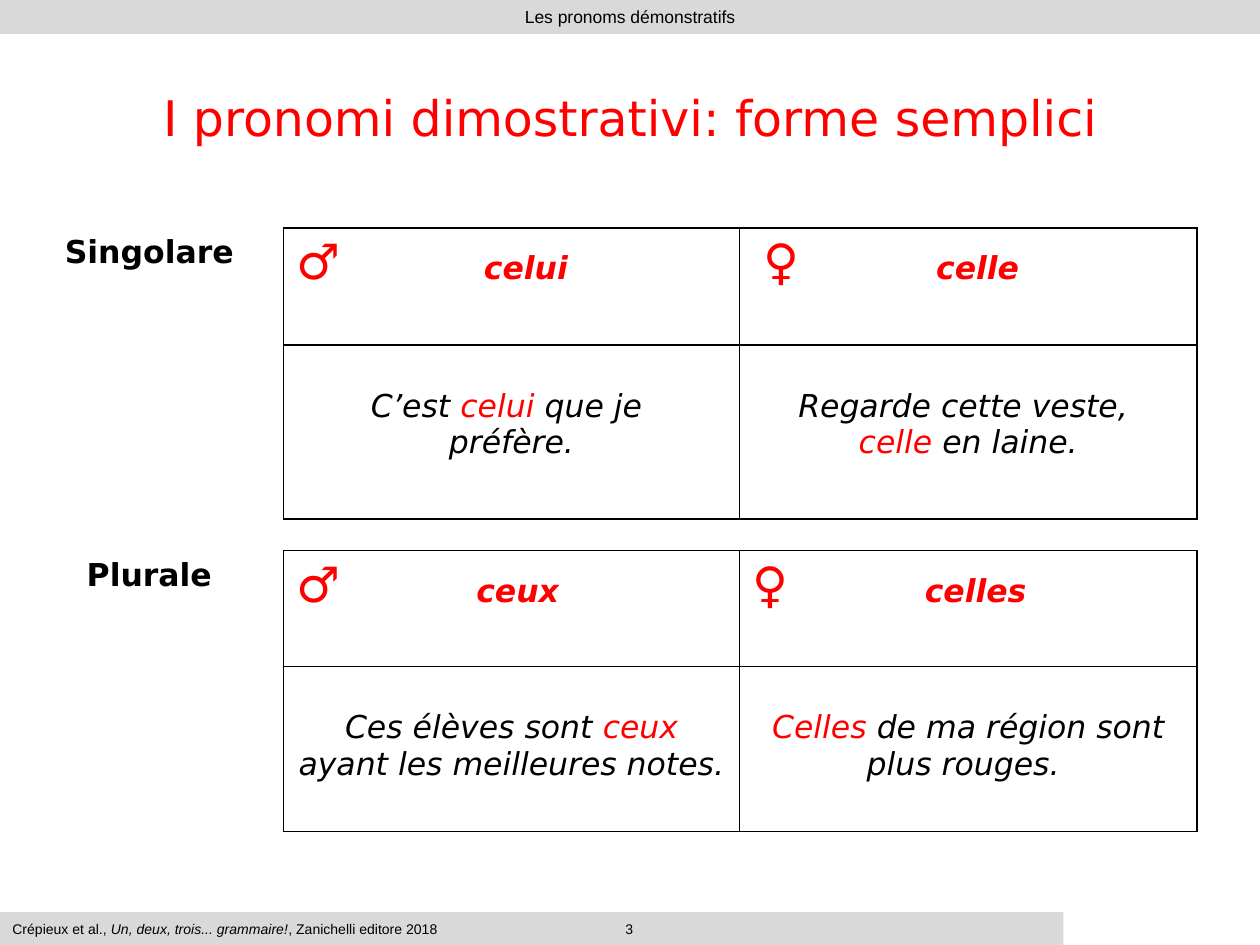
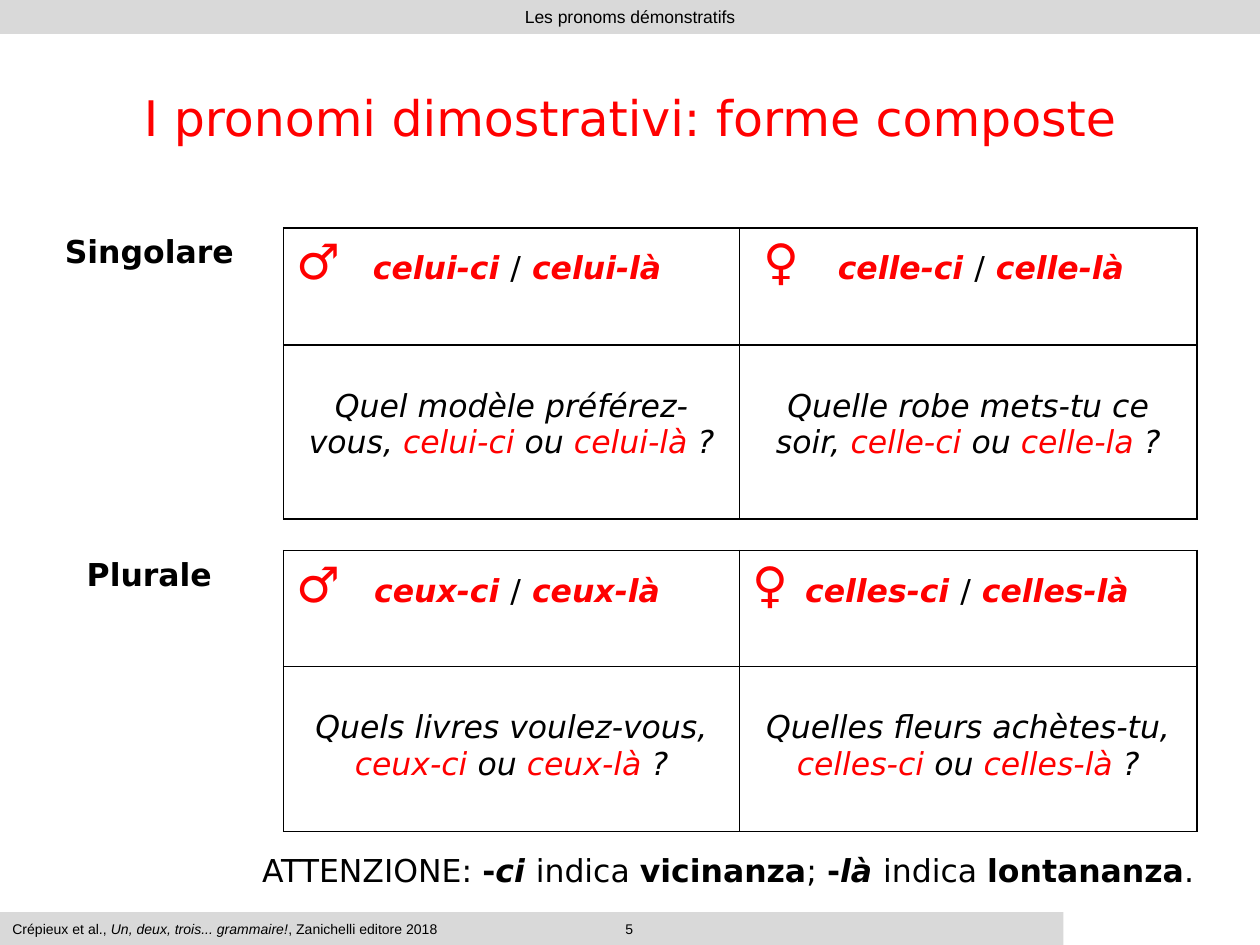
"""Builds two slides on the simple and compound forms of French demonstrative pronouns."""
from lxml.etree import SubElement
from pptx import Presentation
from pptx.dml.color import RGBColor
from pptx.enum.shapes import MSO_SHAPE
from pptx.enum.text import MSO_ANCHOR, PP_ALIGN
from pptx.oxml import parse_xml
from pptx.oxml.ns import nsdecls, qn
from pptx.util import Inches, Pt

RED = RGBColor(0xFF, 0x00, 0x00)
BLACK = RGBColor(0x00, 0x00, 0x00)
GREY = RGBColor(0xD9, 0xD9, 0xD9)
W, H = 10, 7.5
COLS = [2.13, 3.62, 3.63]
LEFT = 0.12
FOOT = 0.26
TABLES = [("Singolare", 1.81, [0.93, 1.38], ["", " "]),
          ("Plurale", 4.37, [0.92, 1.31], ["", ""])]

SLIDES = [
    ("I pronomi dimostrativi: forme semplici", "3", [
        [("celui", 1.49, "C’est *celui *que je \npréfère."),
         ("celle", 1.46, "Regarde cette veste, \n*celle *en laine.")],
        [("ceux", 1.43, "Ces élèves sont *ceux *ayant les meilleures notes."),
         ("celles", 1.37, "*Celles* de ma région sont plus rouges. ")]]),
    ("I pronomi dimostrativi: forme composte", "5", [
        [("celui-ci / celui-là", 0.61, "Quel modèle préférez-vous, *celui-ci *ou *celui-là* ?"),
         ("celle-ci / celle-là", 0.68, "Quelle robe mets-tu ce soir, *celle-ci *ou *celle-la* ?")],
        [("ceux-ci / ceux-là", 0.62, "Quels livres voulez-vous, *ceux-ci *ou *ceux-là* ?"),
         ("celles-ci / celles-là", 0.42, "Quelles fleurs achètes-tu, *celles-ci *ou *celles-là* ?")]]),
]
WARNING = [("ATTENZIONE: ", ""), ("-", "b"), ("ci ", "bi"), ("indica ", ""),
           ("vicinanza", "b"), ("; ", ""), ("-", "b"), ("là ", "bi"),
           ("indica ", ""), ("lontananza", "b"), (".", "")]


def add_text(p, text, size=18, font="DejaVu Sans", color=BLACK, bold=False, italic=False):
    for i, line in enumerate(text.split("\n")):
        if i:
            p.add_line_break()
        if line:
            r = p.add_run()
            r.text = line
            r.font.size, r.font.name = Pt(size), font
            r.font.bold, r.font.italic = bold, italic
            r.font.color.rgb = color


def add_band(s, x, y, w, h, align):
    sp = s.shapes.add_shape(MSO_SHAPE.RECTANGLE, Inches(x), Inches(y), Inches(w), Inches(h))
    sp.shadow.inherit = False
    sp.fill.solid()
    sp.fill.fore_color.rgb = GREY
    sp.line.fill.background()
    tf = sp.text_frame
    tf.word_wrap = True
    tf.margin_top = tf.margin_bottom = 0
    tf.vertical_anchor = MSO_ANCHOR.MIDDLE
    p = tf.paragraphs[0]
    p.alignment = align
    return p


prs = Presentation()
prs.slide_width, prs.slide_height = Inches(W), Inches(H)

for title, number, groups in SLIDES:
    compound = "composte" in title
    s = prs.slides.add_slide(prs.slide_layouts[1 if compound else 5])

    p = add_band(s, 0, 0, W, 0.27, PP_ALIGN.CENTER)
    add_text(p, "Les pronoms démonstratifs", size=10, font="Arial")
    p = add_band(s, 0, H - FOOT, 8.44, FOOT, PP_ALIGN.LEFT)
    for i, part in enumerate("Crépieux et al., *Un, deux, trois... grammaire!*, Zanichelli editore 2018".split("*")):
        add_text(p, part, size=8, font="Arial", italic=i == 1)
    p = add_band(s, 3.86, H - FOOT, 2.27, FOOT, PP_ALIGN.CENTER)
    add_text(p, number, size=8, font="Arial")

    sp = s.shapes.title
    sp.left, sp.top, sp.width, sp.height = Inches(0.5), Inches(0.3), Inches(9), Inches(1.25)
    p = sp.text_frame.paragraphs[0]
    p.alignment = PP_ALIGN.CENTER
    add_text(p, title, size=28, color=RED)

    if compound:
        sp = s.placeholders[1]
        sp.left, sp.top, sp.width, sp.height = Inches(1.98), Inches(6.7), Inches(7.8), Inches(0.4)
        p = sp.text_frame.paragraphs[0]
        pPr = p._p.get_or_add_pPr()
        pPr.set("marL", "0")
        pPr.set("indent", "0")
        SubElement(pPr, qn("a:buNone"))
        p.space_before = Pt(0)
        for text, style in WARNING:
            add_text(p, text, bold="b" in style, italic="i" in style)

    for (label, top, rows, leads), entries in zip(TABLES, groups):
        tbl = s.shapes.add_table(2, 3, Inches(LEFT), Inches(top),
                                 Inches(sum(COLS)), Inches(sum(rows))).table
        tbl.first_row = tbl.horz_banding = False
        for col, width in zip(tbl.columns, COLS):
            col.width = Inches(width)
        for row, height in zip(tbl.rows, rows):
            row.height = Inches(height)

        p = tbl.cell(0, 0).text_frame.paragraphs[0]
        p.alignment = PP_ALIGN.CENTER
        add_text(p, label, bold=True)

        for c, (symbol, lead, (forms, tab, example)) in enumerate(zip("♂♀", leads, entries), 1):
            p = tbl.cell(0, c).text_frame.paragraphs[0]
            tabs = SubElement(p._p.get_or_add_pPr(), qn("a:tabLst"))
            SubElement(tabs, qn("a:tab"), pos=str(Inches(tab)), algn="l")
            add_text(p, lead, bold=True)
            add_text(p, symbol, size=28, color=RED, bold=True)
            add_text(p, "\t")
            for i, form in enumerate(forms.split("/")):
                if i:
                    add_text(p, "/")
                add_text(p, form, color=RED, bold=True, italic=True)

            cell = tbl.cell(1, c)
            cell.margin_top = Inches(0.34)
            p = cell.text_frame.paragraphs[0]
            p.alignment = PP_ALIGN.CENTER
            for i, part in enumerate(example.split("*")):
                add_text(p, part, color=RED if i % 2 else BLACK, italic=True)

        for i, cell in enumerate(tbl.iter_cells()):
            cell.fill.background()
            tcPr = cell._tc.get_or_add_tcPr()
            for n, side in enumerate("LRTB"):
                shown = i % 3 or side == "R"
                fill = f'<a:solidFill><a:srgbClr val="{BLACK}"/></a:solidFill>' if shown else "<a:noFill/>"
                tcPr.insert(n, parse_xml(f'<a:ln{side} {nsdecls("a")} w="{Pt(1)}">{fill}</a:ln{side}>'))

prs.save("out.pptx")
